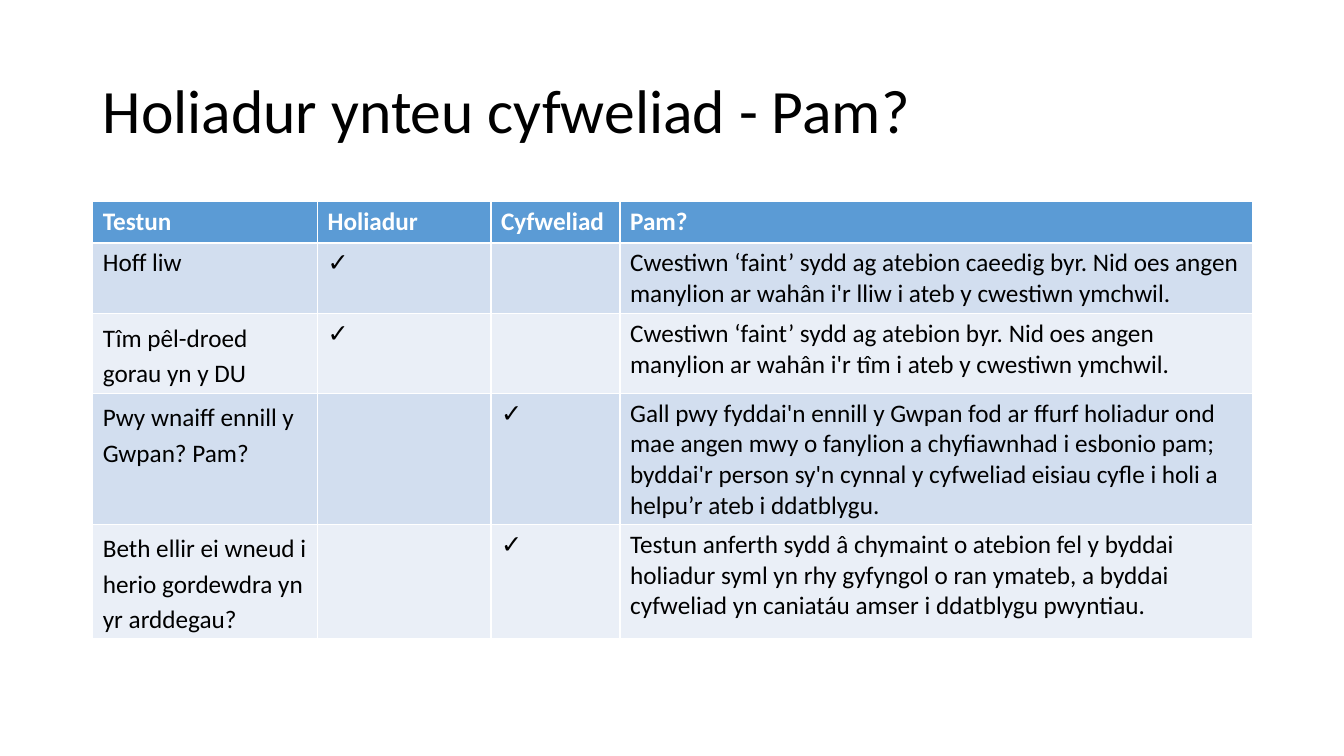
from dataclasses import dataclass

from pptx import Presentation
from pptx.dml.color import RGBColor
from pptx.enum.text import MSO_ANCHOR
from pptx.util import Inches, Pt

TITLE = "Holiadur ynteu cyfweliad - Pam?"
HEADERS = ("Testun", "Holiadur", "Cyfweliad", "Pam?")
TOPICS = [
    ("Hoff liw", "Holiadur",
     "Cwestiwn ‘faint’ sydd ag atebion caeedig byr. Nid oes angen manylion "
     "ar wahân i'r lliw i ateb y cwestiwn ymchwil."),
    ("Tîm pêl-droed gorau yn y DU", "Holiadur",
     "Cwestiwn ‘faint’ sydd ag atebion byr. Nid oes angen manylion "
     "ar wahân i'r tîm i ateb y cwestiwn ymchwil."),
    ("Pwy wnaiff ennill y Gwpan? Pam?", "Cyfweliad",
     "Gall pwy fyddai'n ennill y Gwpan fod ar ffurf holiadur ond mae angen "
     "mwy o fanylion a chyfiawnhad i esbonio pam; byddai'r person sy'n cynnal "
     "y cyfweliad eisiau cyfle i holi a helpu’r ateb i ddatblygu."),
    ("Beth ellir ei wneud i herio gordewdra yn yr arddegau?", "Cyfweliad",
     "Testun anferth sydd â chymaint o atebion fel y byddai holiadur syml yn "
     "rhy gyfyngol o ran ymateb, a byddai cyfweliad yn caniatáu amser i "
     "ddatblygu pwyntiau."),
]
COLUMN_WIDTHS = (2.23, 1.72, 1.28, 6.27)
ROW_HEIGHT = 0.41
LEFT, TITLE_TOP, TABLE_TOP = 0.92, 0.4, 2
WIDTH, TITLE_HEIGHT = sum(COLUMN_WIDTHS), 1.45


@dataclass(frozen=True)
class Theme:
    font: str = "Calibri"
    title_size: int = 44
    table_size: int = 18
    text: str = "000000"
    header_text: str = "FFFFFF"
    header_fill: str = "5B9BD5"
    bands: tuple = ("D2DEEF", "EAEFF7")


THEME = Theme()


def style_paragraph(paragraph, size, color, bold=False):
    font = paragraph.font
    font.name = THEME.font
    font.size = Pt(size)
    font.bold = bold
    font.color.rgb = RGBColor.from_string(color)


def add_title(slide):
    box = slide.shapes.add_textbox(
        Inches(LEFT), Inches(TITLE_TOP), Inches(WIDTH), Inches(TITLE_HEIGHT))
    frame = box.text_frame
    frame.word_wrap = True
    frame.vertical_anchor = MSO_ANCHOR.MIDDLE
    paragraph = frame.paragraphs[0]
    paragraph.text = TITLE
    paragraph.line_spacing = 0.9
    style_paragraph(paragraph, THEME.title_size, THEME.text)


def fill_cell(cell, text, fill, color, bold):
    cell.fill.solid()
    cell.fill.fore_color.rgb = RGBColor.from_string(fill)
    paragraph = cell.text_frame.paragraphs[0]
    paragraph.text = text
    style_paragraph(paragraph, THEME.table_size, color, bold)


def add_topic_table(slide):
    rows = [HEADERS]
    for topic, method, reason in TOPICS:
        ticks = ["✓" if method == header else "" for header in HEADERS[1:3]]
        rows.append((topic, *ticks, reason))
    table = slide.shapes.add_table(
        len(rows), len(HEADERS), Inches(LEFT), Inches(TABLE_TOP),
        Inches(WIDTH), Inches(ROW_HEIGHT * len(rows))).table
    for column, width in zip(table.columns, COLUMN_WIDTHS):
        column.width = Inches(width)
    for row_index, texts in enumerate(rows):
        table.rows[row_index].height = Inches(ROW_HEIGHT)
        is_header = row_index == 0
        fill = THEME.header_fill if is_header else THEME.bands[(row_index - 1) % 2]
        color = THEME.header_text if is_header else THEME.text
        for column_index, text in enumerate(texts):
            fill_cell(table.cell(row_index, column_index), text, fill, color, is_header)
        if row_index > 1:
            table.cell(row_index, 0).text_frame.paragraphs[0].line_spacing = 1.15


def main():
    presentation = Presentation()
    presentation.slide_width = Inches(13.33)
    presentation.slide_height = Inches(7.5)
    slide = presentation.slides.add_slide(presentation.slide_layouts[6])
    add_title(slide)
    add_topic_table(slide)
    presentation.save("out.pptx")


if __name__ == "__main__":
    main()
